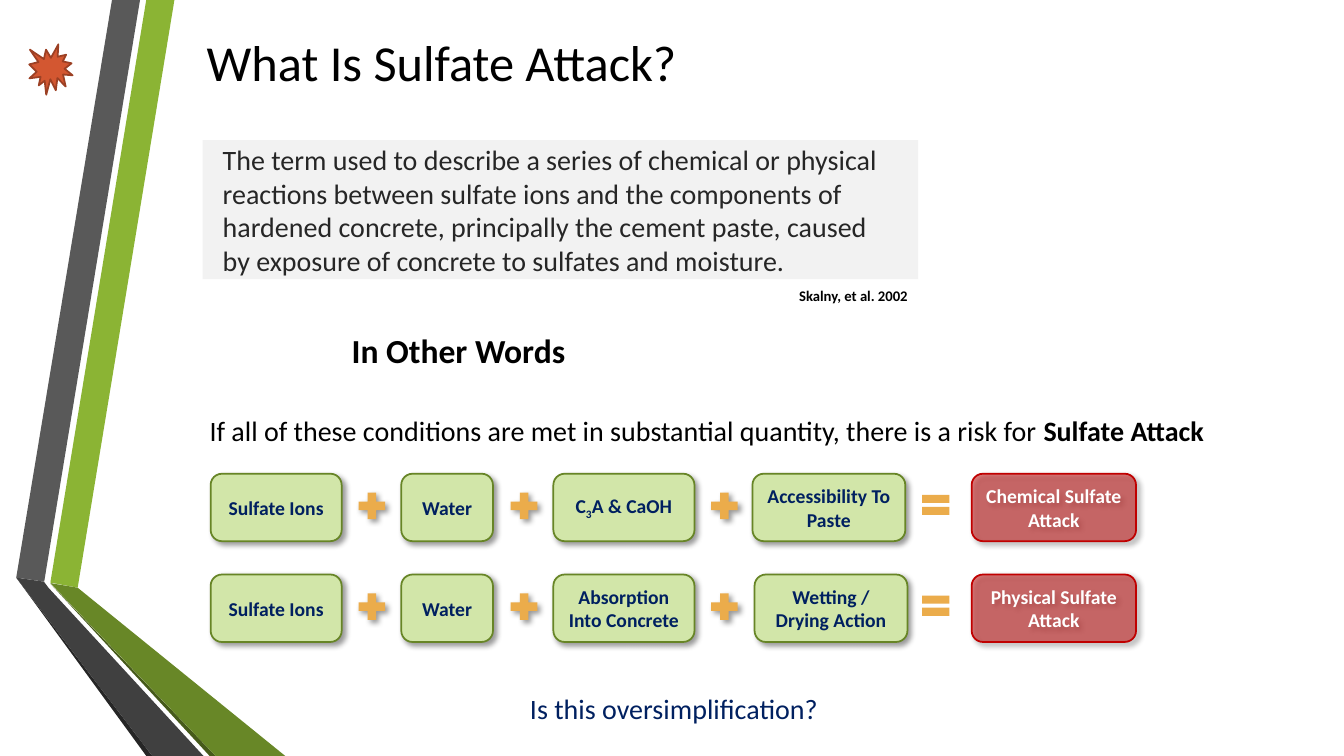
from lxml import etree
from pptx import Presentation
from pptx.dml.color import RGBColor
from pptx.enum import shapes, text
from pptx.oxml.ns import qn
from pptx.util import Pt

rgb = RGBColor.from_string
KIND = shapes.MSO_SHAPE
ALIGN = text.PP_ALIGN
INK, NAVY, GOLD = "000000", "002060", "EBAC4B"


def style(shape, fill, line=None, shadow=False, alpha=None):
    """Set fill, outline and soft shadow; alpha is the fill's opacity in percent."""
    shape.shadow.inherit = False
    shape.fill.solid()
    shape.fill.fore_color.rgb = rgb(fill)
    if alpha:
        colour = shape.fill._xPr.find(qn("a:solidFill"))[0]
        etree.SubElement(colour, qn("a:alpha"), val=str(alpha * 1000))
    if line:
        shape.line.color.rgb = rgb(line)
        shape.line.width = Pt(1.25)
    else:
        shape.line.fill.background()
    if shadow:
        effects = shape._element.spPr.find(qn("a:effectLst"))
        outer = etree.SubElement(effects, qn("a:outerShdw"), blurRad=str(Pt(4)), dist=str(Pt(3)),
                                 dir="2700000", algn="tl", rotWithShape="0")
        black = etree.SubElement(outer, qn("a:srgbClr"), val="000000")
        etree.SubElement(black, qn("a:alpha"), val="40000")


def write(shape, spans, size, color, bold=False, align=ALIGN.LEFT, margin=7.2):
    """Fill a shape with one paragraph of (text, bold, baseline) spans or plain strings."""
    frame = shape.text_frame
    layout = {"word_wrap": True, "vertical_anchor": text.MSO_ANCHOR.MIDDLE,
              "auto_size": text.MSO_AUTO_SIZE.NONE,
              "margin_left": Pt(margin), "margin_right": Pt(margin)}
    for name, value in layout.items():
        setattr(frame, name, value)
    para = frame.paragraphs[0]
    para.alignment = align
    for item in spans:
        words, heavy, baseline = (item, bold, 0) if isinstance(item, str) else item
        span = para.add_run()
        span.text = words
        for name, value in {"name": "Calibri", "size": Pt(size), "bold": heavy}.items():
            setattr(span.font, name, value)
        span.font.color.rgb = rgb(color)
        if baseline:
            span._r.get_or_add_rPr().set("baseline", str(baseline * 1000))


deck = Presentation()
deck.slide_width, deck.slide_height = Pt(960), Pt(540)
page = deck.slides.add_slide(deck.slide_layouts[5])

# Folded ribbons along the left edge
ribbons = [
    ("8BB434", [(36, 416.2), (55.5, 419.8), (124.6, 0), (104.5, 0)]),
    ("595959", [(100, 0), (80, 0), (11.6, 412.6), (31.6, 415.5)]),
    ("262626", [(11.6, 412.6), (104.5, 540), (108.8, 540)]),
    ("465A1A", [(36, 416.9), (149.8, 540), (154.1, 540)]),
    ("688727", [(36, 416.5), (154.1, 540), (203.8, 540), (55.5, 419.8)]),
    ("404040", [(145.4, 540), (34.6, 419.8), (31.4, 415.5), (11.6, 412.6), (108.8, 540)]),
]
for color, points in ribbons:
    corners = [(Pt(x), Pt(y)) for x, y in points]
    outline = page.shapes.build_freeform(*corners[0])
    outline.add_line_segments(corners[1:], close=True)
    style(outline.convert_to_shape(), color)

title = page.shapes.title
for name, value in {"left": 140.4, "top": 0, "width": 819.6, "height": 87.1}.items():
    setattr(title, name, Pt(value))
write(title, ["What Is Sulfate Attack?"], 36, INK)

definition = page.shapes.add_shape(KIND.RECTANGLE, Pt(144.7), Pt(100), Pt(511.2), Pt(99.4))
style(definition, "F2F2F2")
write(definition, ["The term used to describe a series of chemical or physical reactions between "
                   "sulfate ions and the components of hardened concrete, principally the cement "
                   "paste, caused by exposure of concrete to sulfates and moisture."],
      20, "262626", margin=14.4)

# Free text: left, top, width, height, spans, size, colour, bold
notes = [
    (142.6, 284.4, 741.6, 46, ["If all of these conditions are met in substantial quantity, "
                               "there is a risk for ", ("Sulfate Attack", True, 0)], 20, INK, False),
    (371.5, 483.1, 232.6, 46, ["Is this oversimplification?"], 20, NAVY, False),
    (244.1, 226.8, 171.4, 46, ["In Other Words"], 24, INK, True),
    (563.8, 196.6, 100.1, 29.5, ["Skalny, et al. 2002"], 10.5, INK, True),
]
for left, top, width, height, spans, size, color, bold in notes:
    box = page.shapes.add_textbox(Pt(left), Pt(top), Pt(width), Pt(height))
    write(box, spans, size, color, bold)

# Two equations: four conditions joined by plus signs give one result
columns = [(150.5, 93.6), (286.6, 65.5), (395.3, 100.8), (537.5, 109.2), (694.1, 117.4)]
operators = [(252.7, KIND.MATH_PLUS), (361.4, KIND.MATH_PLUS), (504.5, KIND.MATH_PLUS),
             (655.2, KIND.MATH_EQUAL)]
equations = [
    [["Sulfate Ions"], ["Water"], ["C", ("3", True, -25), "A & CaOH"],
     ["Accessibility To Paste"], ["Chemical Sulfate Attack"]],
    [["Sulfate Ions"], ["Water"], ["Absorption Into Concrete"],
     ["Wetting / Drying Action"], ["Physical Sulfate Attack"]],
]
for row, terms in enumerate(equations):
    top = 338.4 + 72 * row
    for column, ((left, width), spans) in enumerate(zip(columns, terms)):
        nudge = 1.5 * row if column == 3 else 0
        term = page.shapes.add_shape(KIND.ROUNDED_RECTANGLE, Pt(left + nudge), Pt(top),
                                     Pt(width), Pt(48.2))
        if column == 4:
            style(term, "C00000", "C00000", shadow=True, alpha=50)
        else:
            style(term, "D2E6A9", "678526", shadow=True)
        write(term, spans, 14, "FFFFFF" if column == 4 else NAVY, True, ALIGN.CENTER)
    for left, kind in operators:
        plus = kind == KIND.MATH_PLUS
        width, height = (25.9, 25.9) if plus else (26.6, 24.5)
        sign = page.shapes.add_shape(kind, Pt(left), Pt(top + 10), Pt(width), Pt(height))
        style(sign, GOLD, shadow=plus)

burst = page.shapes.add_shape(KIND.EXPLOSION1, Pt(20.9), Pt(31.7), Pt(31), Pt(36))
style(burst, "D35731", "9C4024")

deck.save("out.pptx")
